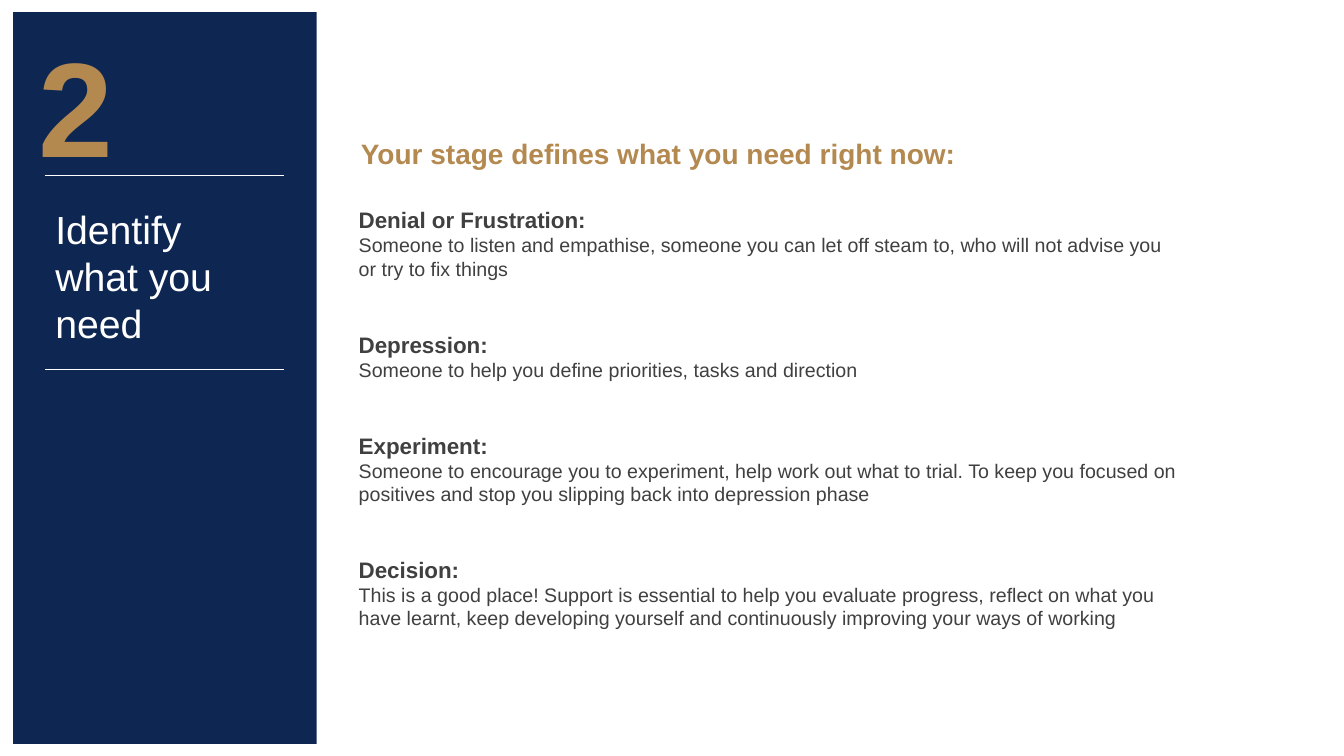
from dataclasses import dataclass

from lxml.etree import SubElement
from pptx import Presentation
from pptx.dml.color import RGBColor
from pptx.enum.shapes import MSO_CONNECTOR as Connector, MSO_SHAPE as Shape
from pptx.oxml.ns import qn
from pptx.util import Inches, Pt


@dataclass(frozen=True)
class Theme:
    """Colours, font and type sizes of the slide."""
    navy: str = "0E2652"
    gold: str = "B38950"
    white: str = "FFFFFF"
    grey: str = "404040"
    font: str = "Arial"
    number: int = 96
    title: int = 28
    heading: int = 20
    stage: int = 16
    need: int = 14
    leading: float = 1.2
    stage_gap: int = 36
    rule: float = 0.5


THEME = Theme()

STAGES = [
    ("Denial or Frustration:",
     "Someone to listen and empathise, someone you can let off steam to, "
     "who will not advise you or try to fix things"),
    ("Depression:",
     "Someone to help you define priorities, tasks and direction"),
    ("Experiment:",
     "Someone to encourage you to experiment, help work out what to trial. "
     "To keep you focused on positives and stop you slipping back into depression phase"),
    ("Decision:",
     "This is a good place! Support is essential to help you evaluate progress, "
     "reflect on what you have learnt, keep developing yourself and continuously "
     "improving your ways of working"),
]


def add_text(slide, box, lines):
    """Add a text box of (text, size, colour, bold, space after) lines."""
    frame = slide.shapes.add_textbox(*map(Inches, box)).text_frame
    frame.word_wrap = True
    frame.text = "\n".join(line[0] for line in lines)
    for paragraph, (_, size, colour, bold, gap) in zip(frame.paragraphs, lines):
        paragraph.line_spacing = Pt(size * THEME.leading)
        paragraph.space_after = Pt(gap)
        font = paragraph.runs[0].font
        font.name, font.size, font.bold = THEME.font, Pt(size), bold
        font.color.rgb = RGBColor.from_string(colour)


def add_rule(slide, left, right, y):
    """Draw a thin horizontal rule."""
    rule = slide.shapes.add_connector(
        Connector.STRAIGHT, Inches(left), Inches(y), Inches(right), Inches(y))
    rule.line.color.rgb = RGBColor.from_string(THEME.white)
    rule.line.width = Pt(THEME.rule)
    SubElement(rule._element.spPr, qn("a:effectLst"))


def add_sidebar(slide, box, number, title):
    """Place the navy panel with its step number and ruled title."""
    left, top, width, height = box
    panel = slide.shapes.add_shape(Shape.RECTANGLE, *map(Inches, box))
    panel.shadow.inherit = False
    panel.fill.solid()
    panel.fill.fore_color.rgb = RGBColor.from_string(THEME.navy)
    panel.line.fill.background()

    inner = left + 0.32
    inner_width = width - 0.64
    add_text(slide, (left + 0.15, top + 0.06, 0.89, 1.63),
             [(number, THEME.number, THEME.gold, True, 0)])
    add_text(slide, (inner, top + 1.87, inner_width, 1.67),
             [(title, THEME.title, THEME.white, False, 0)])
    for offset in (1.62, 3.54):
        add_rule(slide, inner, inner + inner_width, top + offset)


def add_needs(slide, box, heading, stages):
    """Place the heading and the need that belongs to each stage."""
    left, top, width, height = box
    add_text(slide, (left + 0.02, top, width - 0.02, 0.44),
             [(heading, THEME.heading, THEME.gold, True, 0)])
    lines = []
    for stage, need in stages:
        lines += [(stage, THEME.stage, THEME.grey, True, 0),
                  (need, THEME.need, THEME.grey, False, THEME.stage_gap)]
    add_text(slide, (left, top + 0.69, width - 0.6, height - 0.69), lines)


def main():
    """Build and save the slide."""
    deck = Presentation()
    deck.slide_width, deck.slide_height = Inches(13.33), Inches(7.5)
    slide = deck.slides.add_slide(deck.slide_layouts[6])
    add_sidebar(slide, (0.13, 0.12, 3.01, 7.26), "2", "Identify what you need")
    add_needs(slide, (3.46, 1.31, 8.94, 5.03),
              "Your stage defines what you need right now:", STAGES)
    deck.save("out.pptx")


if __name__ == "__main__":
    main()
